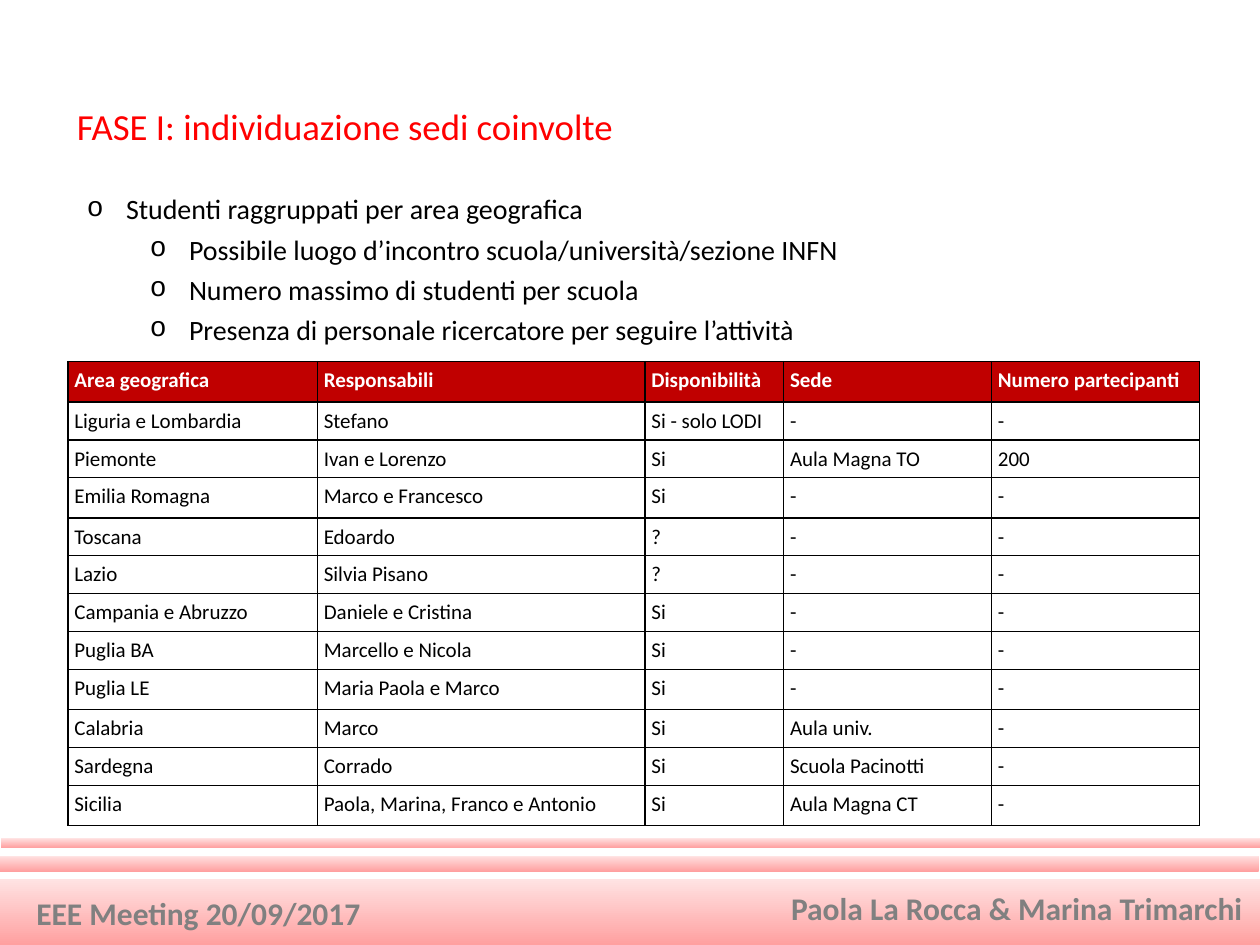
from lxml import etree
from pptx import Presentation
from pptx.dml.color import RGBColor
from pptx.enum.shapes import MSO_SHAPE
from pptx.enum.text import MSO_ANCHOR, PP_ALIGN
from pptx.oxml.ns import qn
from pptx.util import Inches, Pt

RECT = MSO_SHAPE.RECTANGLE
MIDDLE = MSO_ANCHOR.MIDDLE
LEFT = PP_ALIGN.LEFT
RED = RGBColor(0xFF, 0x00, 0x00)
DARK_RED = RGBColor(0xC0, 0x00, 0x00)
ROSE = RGBColor(0xFF, 0xA0, 0xA0)
PALE_ROSE = RGBColor(0xFF, 0xE3, 0xE3)
GRAY = RGBColor(0x80, 0x80, 0x80)
BLACK = RGBColor(0x00, 0x00, 0x00)
WHITE = RGBColor(0xFF, 0xFF, 0xFF)
FONT = "Calibri"


def add_run(p, text, size, color, bold=False):
    r = p.add_run()
    r.text = text
    r.font.name = FONT
    r.font.size = Pt(size)
    r.font.bold = bold
    r.font.color.rgb = color


def add_border(cell, side):
    ln = etree.SubElement(cell._tc.get_or_add_tcPr(), qn(f"a:{side}"), w=str(Pt(1)))
    fill = etree.SubElement(ln, qn("a:solidFill"))
    etree.SubElement(fill, qn("a:srgbClr"), val=str(BLACK))


prs = Presentation()
prs.slide_width = Inches(10)
prs.slide_height = Inches(7.5)
s = prs.slides.add_slide(prs.slide_layouts[1])

bands = [(0, 6.98, 0.52), (-0.01, 6.79, 0.13), (0.01, 6.65, 0.08)]
for left, top, height in bands:
    sp = s.shapes.add_shape(RECT, Inches(left), Inches(top), prs.slide_width, Inches(height))
    sp.shadow.inherit = False
    sp.line.fill.background()
    sp.fill.gradient()
    sp.fill.gradient_angle = 90
    for stop, color in zip(sp.fill.gradient_stops, (ROSE, PALE_ROSE)):
        stop.color.rgb = color

footers = [
    (0.19, 7.05, 2.8, "EEE Meeting 20/09/2017"),
    (6.18, 7.01, 3.82, "Paola La Rocca & Marina Trimarchi"),
]
for left, top, width, text in footers:
    sp = s.shapes.add_textbox(Inches(left), Inches(top), Inches(width), Inches(0.4))
    sp.text_frame.word_wrap = False
    add_run(sp.text_frame.paragraphs[0], text, 18, GRAY, True)

title = s.shapes.title
title.left, title.top = Inches(0.51), Inches(0.6)
title.width, title.height = Inches(7.72), Inches(0.79)
tf = title.text_frame
tf.vertical_anchor = MIDDLE
p = tf.paragraphs[0]
p.alignment = LEFT
add_run(p, "FASE I: individuazione sedi coinvolte", 21, RED)

body = s.placeholders[1]
body.left, body.top = Inches(0.59), Inches(1.42)
body.width, body.height = Inches(8.74), Inches(1.37)
tf = body.text_frame
items = [
    (0, "Studenti raggruppati per area geografica"),
    (1, "Possibile luogo d’incontro scuola/università/sezione INFN"),
    (1, "Numero massimo di studenti per scuola"),
    (1, "Presenza di personale ricercatore per seguire l’attività"),
]
for i, (level, text) in enumerate(items):
    p = tf.add_paragraph() if i else tf.paragraphs[0]
    p.level = level
    p.line_spacing = 1.2
    p.space_before = Pt(0)
    pPr = p._p.get_or_add_pPr()
    pPr.set("marL", str(Inches(0.31 + 0.5 * level)))
    pPr.set("indent", str(Inches(-0.31)))
    etree.SubElement(pPr, qn("a:buFont"), typeface="Courier New")
    etree.SubElement(pPr, qn("a:buChar"), char="o")
    add_run(p, text, 16, BLACK)

rows = [
    ("Area geografica", "Responsabili", "Disponibilità", "Sede", "Numero partecipanti"),
    ("Liguria e Lombardia", "Stefano", "Si - solo LODI", "-", "-"),
    ("Piemonte", "Ivan e Lorenzo", "Si", "Aula Magna TO", "200"),
    ("Emilia Romagna", "Marco e Francesco", "Si", "-", "-"),
    ("Toscana", "Edoardo", "?", "-", "-"),
    ("Lazio", "Silvia Pisano", "?", "-", "-"),
    ("Campania e Abruzzo", "Daniele e Cristina", "Si", "-", "-"),
    ("Puglia BA", "Marcello e Nicola", "Si", "-", "-"),
    ("Puglia LE", "Maria Paola e Marco", "Si", "-", "-"),
    ("Calabria", "Marco", "Si", "Aula univ.", "-"),
    ("Sardegna", "Corrado", "Si", "Scuola Pacinotti", "-"),
    ("Sicilia", "Paola, Marina, Franco e Antonio", "Si", "Aula Magna CT", "-"),
]
col_widths = [1.98, 2.6, 1.1, 1.65, 1.65]
tall_rows = (0, 3, 8, 11)
table = s.shapes.add_table(
    len(rows), len(col_widths), Inches(0.54), Inches(2.87), Inches(sum(col_widths)), Inches(3.7)
).table
for col, width in zip(table.columns, col_widths):
    col.width = Inches(width)
for i, values in enumerate(rows):
    table.rows[i].height = Inches(0.32 if i in tall_rows else 0.3)
    header = i == 0
    for j, text in enumerate(values):
        cell = table.cell(i, j)
        cell.margin_left = cell.margin_right = Inches(0.05)
        cell.margin_top = cell.margin_bottom = Inches(0.05)
        for side in ("lnL", "lnR", "lnT", "lnB"):
            add_border(cell, side)
        cell.fill.solid()
        cell.fill.fore_color.rgb = DARK_RED if header else WHITE
        add_run(cell.text_frame.paragraphs[0], text, 12, WHITE if header else BLACK, header)

prs.save("out.pptx")
